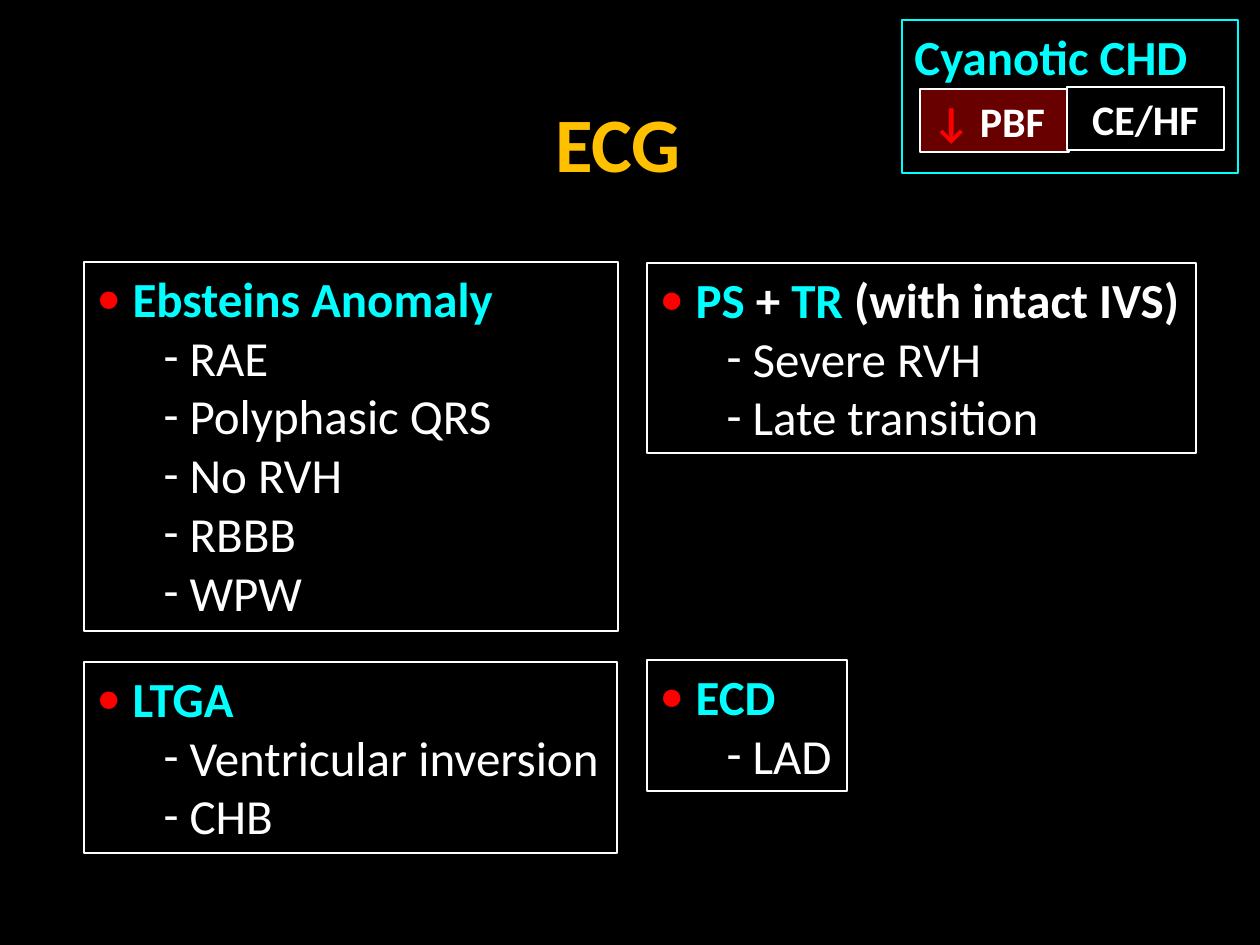
from dataclasses import dataclass

from lxml import etree
from pptx import Presentation
from pptx import util as u
from pptx.dml import color
from pptx.enum import shapes, text
from pptx.oxml import ns


@dataclass(frozen=True)
class Theme:
    font: str = "Calibri"
    black: str = "000000"
    white: str = "FFFFFF"
    cyan: str = "00FFFF"
    red: str = "FF0000"
    gold: str = "FFC000"
    maroon: str = "680000"
    title: int = 44
    body: int = 28
    tag: int = 24
    line: float = 0.75


def px(n):
    return u.Emu(round(n * 914400 / 126))


def rgb(value):
    return color.RGBColor.from_string(value)


class Deck:
    def __init__(self, theme):
        self.t = theme
        self.prs = Presentation()
        self.prs.slide_width, self.prs.slide_height = px(1260), px(945)

    def new_slide(self, layout):
        self.s = self.prs.slides.add_slide(self.prs.slide_layouts[layout])
        self.fill(self.s.background.fill, self.t.black)

    def fill(self, fill, value):
        fill.solid()
        fill.fore_color.rgb = rgb(value)

    def outline(self, sp, value):
        sp.line.color.rgb = rgb(value)
        sp.line.width = u.Pt(self.t.line)

    def place(self, sp, box):
        sp.left, sp.top, sp.width, sp.height = map(px, box)

    def frame(self, sp, wrap, anchor):
        tf = sp.text_frame
        tf.auto_size = text.MSO_AUTO_SIZE.NONE
        tf.word_wrap = wrap
        tf.vertical_anchor = anchor
        return tf

    def run(self, p, words, size, value, bold=True):
        r = p.add_run()
        r.text = words
        r.font.name = self.t.font
        r.font.size = u.Pt(size)
        r.font.bold = bold
        r.font.color.rgb = rgb(value)

    def bullet(self, p, char, value, margin, hang):
        pPr = p._p.get_or_add_pPr()
        pPr.set("marL", str(px(margin)))
        pPr.set("indent", str(-px(hang)))
        clr = etree.SubElement(pPr, ns.qn("a:buClr"))
        etree.SubElement(clr, ns.qn("a:srgbClr"), val=value)
        etree.SubElement(pPr, ns.qn("a:buFont"), typeface=self.t.font)
        etree.SubElement(pPr, ns.qn("a:buChar"), char=char)
        p.space_before = u.Pt(0)

    def title(self, words, box):
        sp = self.s.shapes.title
        self.place(sp, box)
        p = self.frame(sp, False, text.MSO_ANCHOR.MIDDLE).paragraphs[0]
        p.alignment = text.PP_ALIGN.CENTER
        self.run(p, words, self.t.title, self.t.gold)

    def findings(self, idx, box, heading, items):
        t = self.t
        sp = self.s.placeholders[idx]
        self.place(sp, box)
        self.outline(sp, t.white)
        tf = self.frame(sp, False, text.MSO_ANCHOR.TOP)
        p = tf.paragraphs[0]
        self.bullet(p, "•", t.red, 36, 36)
        for words, value in heading:
            self.run(p, words, t.body, value)
        for item in items:
            p = tf.add_paragraph()
            p.level = 1
            self.bullet(p, "-", t.white, 93, 26)
            self.run(p, item, t.body, t.white, bold=False)

    def group(self):
        return self.s.shapes.add_group_shape()

    def label(self, group, box, fill, line, runs, size, align, anchor):
        sp = group.shapes.add_shape(shapes.MSO_SHAPE.RECTANGLE, *map(px, box))
        sp.shadow.inherit = False
        self.fill(sp.fill, fill)
        self.outline(sp, line)
        p = self.frame(sp, False, anchor).paragraphs[0]
        p.alignment = align
        for words, value in runs:
            self.run(p, words, size, value)


def main():
    t = Theme()
    deck = Deck(t)
    deck.new_slide(4)
    deck.title("ECG", (539, 89, 158, 106))

    left, right = 84, 647
    deck.findings(1, (left, 262, 534, 369), [("Ebsteins Anomaly", t.cyan)],
                  ["RAE", "Polyphasic QRS", "No RVH", "RBBB", "WPW"])
    deck.findings(2, (left, 662, 533, 191), [("LTGA", t.cyan)],
                  ["Ventricular inversion", "CHB"])
    deck.findings(3, (right, 263, 549, 190),
                  [("PS", t.cyan), (" + ", t.white), ("TR", t.cyan),
                   (" (with intact IVS)", t.white)],
                  ["Severe RVH", "Late transition"])
    deck.findings(4, (right, 660, 200, 131), [("ECD", t.cyan)], ["LAD"])

    al, an = text.PP_ALIGN, text.MSO_ANCHOR
    header = deck.group()
    deck.label(header, (902, 20, 336, 153), t.black, t.cyan,
               [("Cyanotic CHD", t.cyan)], t.body, al.LEFT, an.TOP)
    deck.label(header, (920, 89, 149, 63), t.maroon, t.white,
               [("↓", t.red), (" PBF", t.white)], t.tag, al.LEFT, an.MIDDLE)
    deck.label(header, (1067, 87, 157, 63), t.black, t.white,
               [("CE/HF", t.white)], t.tag, al.CENTER, an.MIDDLE)

    deck.prs.save("out.pptx")


if __name__ == "__main__":
    main()
